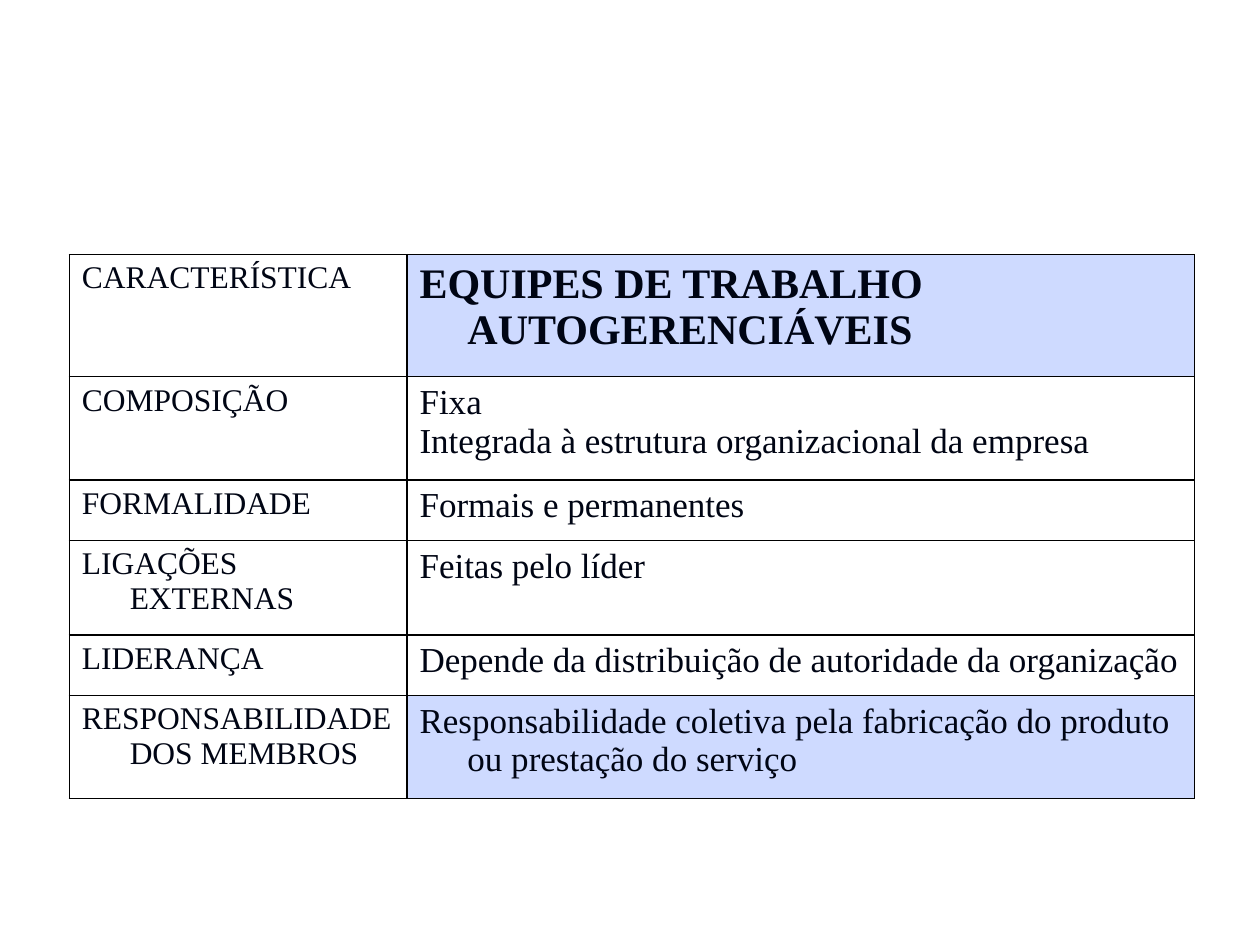
import pptx
import pptx.util
import pptx.dml.color
import pptx.oxml.ns
from lxml import etree

Inches = pptx.util.Inches
Pt = pptx.util.Pt
INK, TINT, LINE = "000514", "CEDAFF", "000000"


def color(code):
    return pptx.dml.color.RGBColor.from_string(code)


def border(cell):
    props = cell._tc.get_or_add_tcPr()
    for side in ("lnL", "lnR", "lnT", "lnB"):
        line = etree.SubElement(props, pptx.oxml.ns.qn("a:" + side), w=str(Pt(1)))
        fill = etree.SubElement(line, pptx.oxml.ns.qn("a:solidFill"))
        etree.SubElement(fill, pptx.oxml.ns.qn("a:srgbClr"), val=LINE)


deck = pptx.Presentation()
deck.slide_width, deck.slide_height = Inches(10), Inches(7.5)
slide = deck.slides.add_slide(deck.slide_layouts[6])

# Row height, label, description, tinted description
rows = [
    (0.97, "CARACTERÍSTICA", "EQUIPES DE TRABALHO AUTOGERENCIÁVEIS", True),
    (0.82, "COMPOSIÇÃO",
     "Fixa\nIntegrada à estrutura organizacional da empresa", False),
    (0.48, "FORMALIDADE", "Formais e permanentes", False),
    (0.75, "LIGAÇÕES EXTERNAS", "Feitas pelo líder", False),
    (0.48, "LIDERANÇA",
     "Depende da distribuição de autoridade da organização", False),
    (0.82, "RESPONSABILIDADE DOS MEMBROS",
     "Responsabilidade coletiva pela fabricação do produto "
     "ou prestação do serviço", True),
]

# Table frame
table = slide.shapes.add_table(len(rows), 2, Inches(0.55), Inches(2.02),
                               Inches(8.93), Inches(4.32)).table
table.first_row = table.horz_banding = False
for col, width in zip(table.columns, (2.68, 6.25)):
    col.width = Inches(width)

# Cells
for r, (height, label, text, tinted) in enumerate(rows):
    table.rows[r].height = Inches(height)
    for c, words in enumerate((label, text)):
        cell = table.cell(r, c)
        border(cell)
        if c == 1 and tinted:
            cell.fill.solid()
            cell.fill.fore_color.rgb = color(TINT)
        else:
            cell.fill.background()
        head = r == 0 and c == 1
        size = 24 if head else (18, 20)[c]
        cell.text_frame.text = words
        for para in cell.text_frame.paragraphs:
            # Hanging indent
            props = para._p.get_or_add_pPr()
            props.set("marL", str(Inches(0.38)))
            props.set("indent", str(-Inches(0.38)))
            for run in para.runs:
                run.font.name = "Times New Roman"
                run.font.size = Pt(size)
                run.font.bold = head
                run.font.color.rgb = color(INK)

deck.save("out.pptx")
